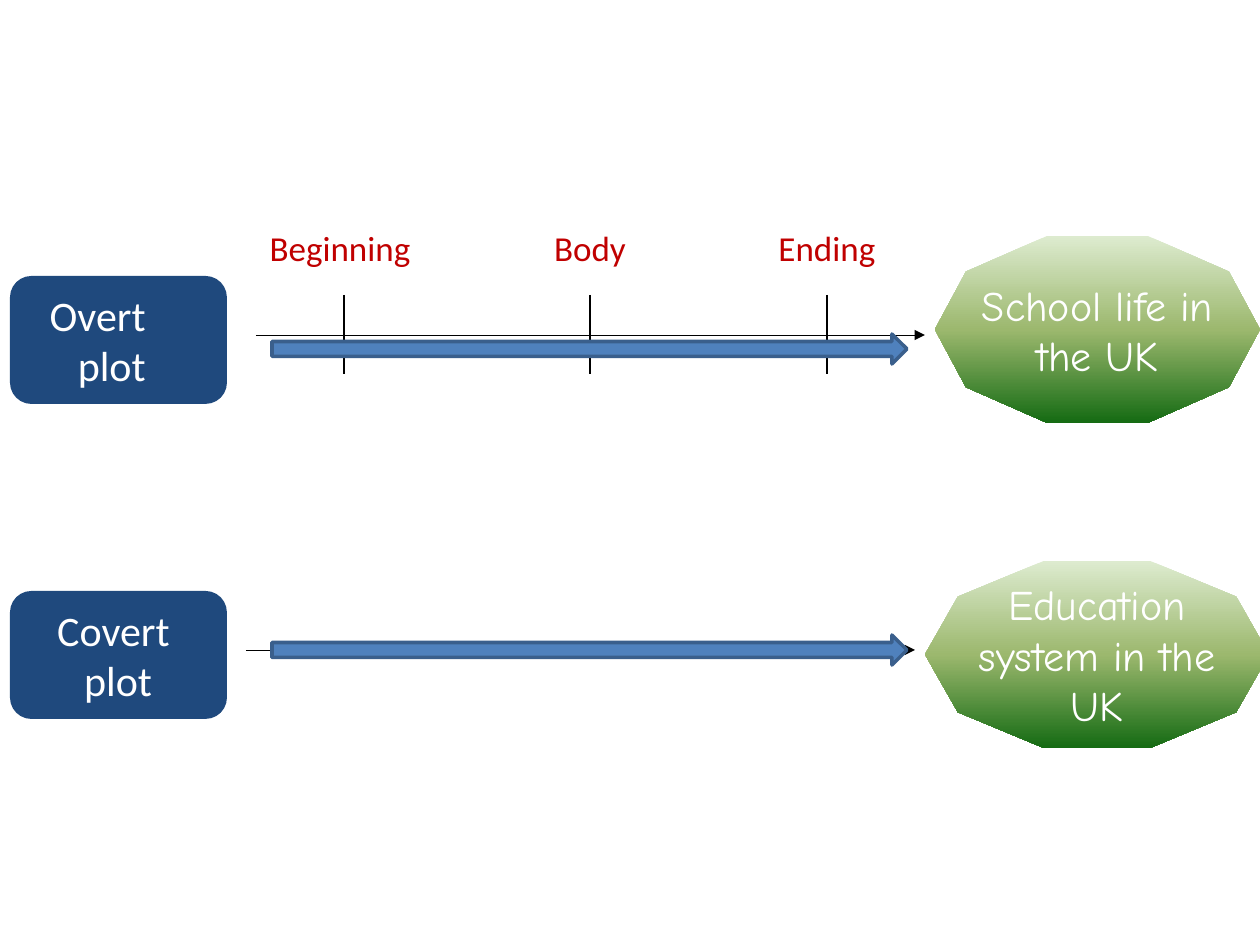
import copy

import pptx
import pptx.dml.color
import pptx.enum.shapes
import pptx.enum.text
import pptx.oxml.ns
import pptx.oxml.xmlchemy
import pptx.util

SCALE = 914400 / 126
COLORS = {
    "navy": "1F497D", "blue": "4F81BD", "edge": "3A5F8C", "red": "C00000",
    "white": "FFFFFF", "black": "000000",
    "pale": "DDEBCF", "olive": "9CB86E", "green": "156B13",
}
SHAPES = pptx.enum.shapes.MSO_SHAPE
ALIGN = pptx.enum.text.PP_ALIGN
LABEL_FORMAT = {"size": pptx.util.Pt(20), "name": "Calibri"}
PLOT_FORMAT = {"size": pptx.util.Pt(24), "name": "Calibri"}
TOPIC_FORMAT = {"size": pptx.util.Pt(24), "name": "Comic Neue"}


def emu(*lengths):
    """Turn px lengths into EMU."""
    return [round(length * SCALE) for length in lengths]


def rgb(name):
    """Look up a named colour."""
    return pptx.dml.color.RGBColor.from_string(COLORS[name])


def write(shape, text, formats, color, align=ALIGN.CENTER):
    """Write one paragraph per line of text in one format."""
    frame = shape.text_frame
    frame.word_wrap = True
    frame.text = text
    for para in frame.paragraphs:
        para.alignment = align
        for name, value in formats.items():
            setattr(para.font, name, value)
        para.font.color.rgb = rgb(color)


def add_block(page, kind, box, fill=None):
    """Add a preset shape without shadow or outline."""
    shape = page.shapes.add_shape(kind, *emu(*box))
    shape.shadow.inherit = False
    shape.line.fill.background()
    shape.text_frame.vertical_anchor = pptx.enum.text.MSO_ANCHOR.MIDDLE
    if fill:
        shape.fill.solid()
        shape.fill.fore_color.rgb = rgb(fill)
    return shape


def add_line(page, start, end, width, arrow=False):
    """Add a thin black line, with an arrowhead at its end if asked."""
    straight = pptx.enum.shapes.MSO_CONNECTOR.STRAIGHT
    line = page.shapes.add_connector(straight, *emu(*start, *end))
    line.line.color.rgb = rgb("black")
    line.line.width = pptx.util.Pt(width)
    properties = line._element.spPr
    if arrow:
        head = pptx.oxml.xmlchemy.OxmlElement("a:tailEnd")
        head.set("type", "triangle")
        properties.find(pptx.oxml.ns.qn("a:ln")).append(head)
    properties.append(pptx.oxml.xmlchemy.OxmlElement("a:effectLst"))


def add_plot_box(page, box, text, align, right_inset):
    """Add the rounded box that names the plot."""
    shape = add_block(page, SHAPES.ROUNDED_RECTANGLE, box, "navy")
    shape.text_frame.margin_right = emu(right_inset)[0]
    write(shape, text, PLOT_FORMAT, "white", align)


def add_topic(page, box, text):
    """Add the green decagon that holds the topic."""
    shape = add_block(page, SHAPES.DECAGON, box)
    shape.fill.gradient()
    shape.fill.gradient_angle = 270
    stops = shape._element.spPr.find(".//" + pptx.oxml.ns.qn("a:gsLst"))
    stops.append(copy.deepcopy(stops[0]))
    shades = zip(shape.fill.gradient_stops, (0, 0.5, 1), ("pale", "olive", "green"))
    for stop, position, color in shades:
        stop.position = position
        stop.color.rgb = rgb(color)
    write(shape, text, TOPIC_FORMAT, "white")


def add_block_arrow(page, box):
    """Add the thick blue arrow of a plot."""
    arrow = add_block(page, SHAPES.RIGHT_ARROW, box, "blue")
    arrow.line.color.rgb = rgb("edge")
    arrow.line.width = pptx.util.Pt(2)


def add_stages(page, box, stages):
    """Add a label above a tick for each stage, given its centre."""
    left, top, width, height = box
    for center, text in stages:
        x = left + center
        label = page.shapes.add_textbox(*emu(x - 138, top, 276, 55))
        write(label, text, LABEL_FORMAT, "red")
        add_line(page, (x, top + 75), (x, top + height), 0.75)


def add_plot(page, box, plot, axis, arrow_top, topic, stages=()):
    """Add one plot row: name box, axis, stages, topic and thick arrow."""
    left, top, width, height = box
    start, end = axis
    topic_left, topic_top, topic_width, topic_text = topic
    axis_y = top + 59
    add_plot_box(page, (left, top, 217, height), *plot)
    add_line(page, (left + start, axis_y), (left + end, axis_y), 0.25, arrow=True)
    add_stages(page, (left, top - 56, width, 154), stages)
    add_topic(page, (left + topic_left, top + topic_top, topic_width, 187), topic_text)
    add_block_arrow(page, (left + 262, top + arrow_top, 635, 30))


def main():
    """Build the slide and save it."""
    deck = pptx.Presentation()
    deck.slide_width, deck.slide_height = emu(1260, 945)
    page = deck.slides.add_slide(deck.slide_layouts[6])
    add_plot(
        page, (10, 276, 1250, 128), ("Overt\nplot", ALIGN.RIGHT, 75),
        (246, 915), 58, (925, -40, 325, "School life in the UK"),
        ((334, "Beginning "), (580, "Body"), (817, "Ending")),
    )
    add_plot(
        page, (10, 591, 1250, 128), ("Covert \nplot", ALIGN.CENTER, 13),
        (236, 905), 44, (915, -30, 344, "Education system in the UK"),
    )
    deck.save("out.pptx")


if __name__ == "__main__":
    main()
